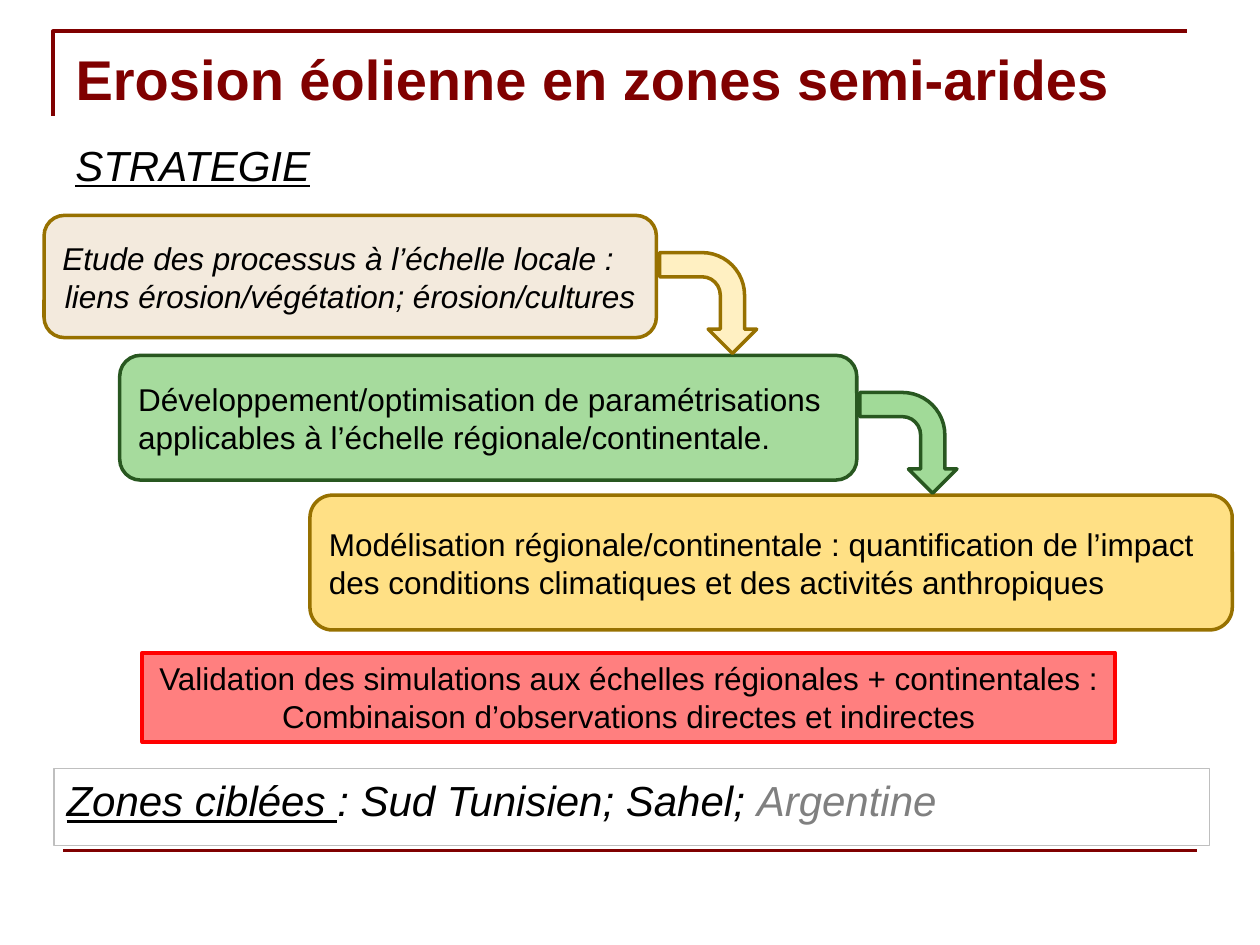
from lxml.etree import SubElement
from pptx import Presentation
from pptx.dml.color import RGBColor
from pptx.enum.shapes import MSO_CONNECTOR as Connector, MSO_SHAPE as Shape
from pptx.enum.text import MSO_ANCHOR as Anchor, MSO_AUTO_SIZE as AutoSize, PP_ALIGN as Align
from pptx.oxml.ns import qn
from pptx.util import Inches, Pt

MAROON = RGBColor(0x80, 0x00, 0x00)
BLACK = RGBColor(0x00, 0x00, 0x00)
GREY = RGBColor(0x80, 0x80, 0x80)
SILVER = RGBColor(0xBF, 0xBF, 0xBF)
RED = RGBColor(0xFF, 0x00, 0x00)
OCHRE = RGBColor(0x97, 0x71, 0x00)
FOREST = RGBColor(0x28, 0x57, 0x20)
BEIGE = RGBColor(0xF3, 0xEA, 0xDD)
GREEN = RGBColor(0xA6, 0xDB, 0x9D)
GOLD = RGBColor(0xFF, 0xE0, 0x85)
CREAM = RGBColor(0xFF, 0xF0, 0xC2)
MINT = RGBColor(0xA1, 0xDA, 0x98)
COLUMNS, ROWS = 100, 75


class StrategySlide:
    """Draws styled elements on one slide, placed on a grid of 100 columns by 75 rows."""

    font_name = "Arial"

    def __init__(self, presentation):
        self.column = presentation.slide_width / COLUMNS
        self.row = presentation.slide_height / ROWS
        self.slide = presentation.slides.add_slide(presentation.slide_layouts[5])
        self.shapes = self.slide.shapes

    def place(self, left, top, width=0, height=0):
        return (round(left * self.column), round(top * self.row),
                round(width * self.column), round(height * self.row))

    def format_font(self, font, size, color=BLACK, bold=False, italic=False, underline=False):
        font.name, font.size, font.color.rgb = self.font_name, Pt(size), color
        font.bold, font.italic, font.underline = bold, italic, underline

    def title(self, text, box):
        title = self.shapes.title
        title.left, title.top, title.width, title.height = self.place(*box)
        title.text_frame.text = text
        title.text_frame.vertical_anchor = Anchor.TOP
        paragraph = title.text_frame.paragraphs[0]
        paragraph.alignment = Align.LEFT
        self.format_font(paragraph.runs[0].font, 32, MAROON, bold=True)

    def corner(self, left, top, right, bottom):
        builder = self.shapes.build_freeform(*self.place(left, bottom)[:2])
        points = [self.place(left, top)[:2], self.place(right, top)[:2]]
        builder.add_line_segments(points, close=False)
        shape = builder.convert_to_shape()
        shape.shadow.inherit = False
        shape.fill.background()
        shape.line.color.rgb, shape.line.width = MAROON, Pt(2.25)

    def rule(self, left, right, row):
        start, end = self.place(left, row)[:2], self.place(right, row)[:2]
        line = self.shapes.add_connector(Connector.STRAIGHT, *start, *end)
        line.line.color.rgb, line.line.width = MAROON, Pt(2.25)
        SubElement(line._element.spPr, qn("a:effectLst"))

    def shape(self, kind, box, fill, outline, width=2, alpha=None):
        shape = self.shapes.add_shape(kind, *self.place(*box))
        shape.shadow.inherit = False
        if fill is None:
            shape.fill.background()
        else:
            shape.fill.solid()
            shape.fill.fore_color.rgb = fill
        if alpha is not None:
            color = shape._element.spPr.find(qn("a:solidFill"))[0]
            SubElement(color, qn("a:alpha"), val=str(alpha * 1000))
        shape.line.color.rgb, shape.line.width = outline, Pt(width)
        return shape

    def label(self, shape, lines, alignments, anchor=Anchor.MIDDLE, italic=False):
        frame = shape.text_frame
        frame.word_wrap, frame.vertical_anchor = True, anchor
        frame.text = "\n".join(lines)
        for paragraph, alignment in zip(frame.paragraphs, alignments):
            paragraph.alignment = alignment
            self.format_font(paragraph.runs[0].font, 18, italic=italic)

    def step(self, box, fill, outline, lines, alignments=(Align.LEFT,), italic=False):
        shape = self.shape(Shape.ROUNDED_RECTANGLE, box, fill, outline)
        self.label(shape, lines, alignments, italic=italic)

    def arrow(self, left, top, fill, outline):
        self.shape(Shape.BENT_ARROW, (left, top, 8, 7.7), fill, outline).rotation = 90

    def validation(self, box, lines):
        shape = self.shape(Shape.RECTANGLE, box, RED, RED, 2.25, alpha=50)
        self.label(shape, lines, [Align.CENTER] * len(lines), Anchor.TOP)
        shape.text_frame.word_wrap = False
        shape.text_frame.auto_size = AutoSize.SHAPE_TO_FIT_TEXT

    def heading(self, box, parts, framed=False):
        if framed:
            shape = self.shape(Shape.RECTANGLE, box, None, SILVER, 0.75)
        else:
            shape = self.shapes.add_textbox(*self.place(*box))
        frame = shape.text_frame
        frame.word_wrap, frame.vertical_anchor = True, Anchor.TOP
        paragraph = frame.paragraphs[0]
        paragraph.alignment = Align.LEFT
        for text, color, underline in parts:
            run = paragraph.add_run()
            run.text = text
            self.format_font(run.font, 24, color, italic=True, underline=underline)


def main():
    """Build the strategy slide and save it."""
    presentation = Presentation()
    presentation.slide_width, presentation.slide_height = Inches(10), Inches(7.5)
    slide = StrategySlide(presentation)

    slide.corner(4.2, 2.5, 94.2, 9.2)
    slide.rule(5, 95, 67.5)
    slide.title("Erosion éolienne en zones semi-arides", (5, 3, 92.1, 12.5))
    slide.heading((5, 10.6, 91.7, 6.1), [("STRATEGIE", BLACK, True)])

    slide.step((3.5, 17.1, 48.6, 9.7), BEIGE, OCHRE,
               ["Etude des processus à l’échelle locale :",
                "liens érosion/végétation; érosion/cultures"],
               (Align.LEFT, Align.CENTER), italic=True)
    slide.step((9.5, 28.2, 58.5, 9.9), GREEN, FOREST,
               ["Développement/optimisation de paramétrisations "
                "applicables à l’échelle régionale/continentale."])
    slide.step((24.6, 39.3, 73.2, 10.7), GOLD, OCHRE,
               ["Modélisation régionale/continentale : quantification de l’impact "
                "des conditions climatiques et des activités anthropiques"])
    slide.arrow(52.2, 20.2, CREAM, OCHRE)
    slide.arrow(68.1, 31.3, MINT, FOREST)

    slide.heading((4.3, 61, 91.7, 6.1),
                  [("Zones ciblées ", BLACK, True),
                   (": Sud Tunisien; Sahel; ", BLACK, False),
                   ("Argentine", GREY, False)], framed=True)
    slide.validation((11.3, 51.8, 77.2, 7.1),
                     ["Validation des simulations aux échelles régionales + continentales :",
                      "Combinaison d’observations directes et indirectes"])
    presentation.save("out.pptx")


if __name__ == "__main__":
    main()
